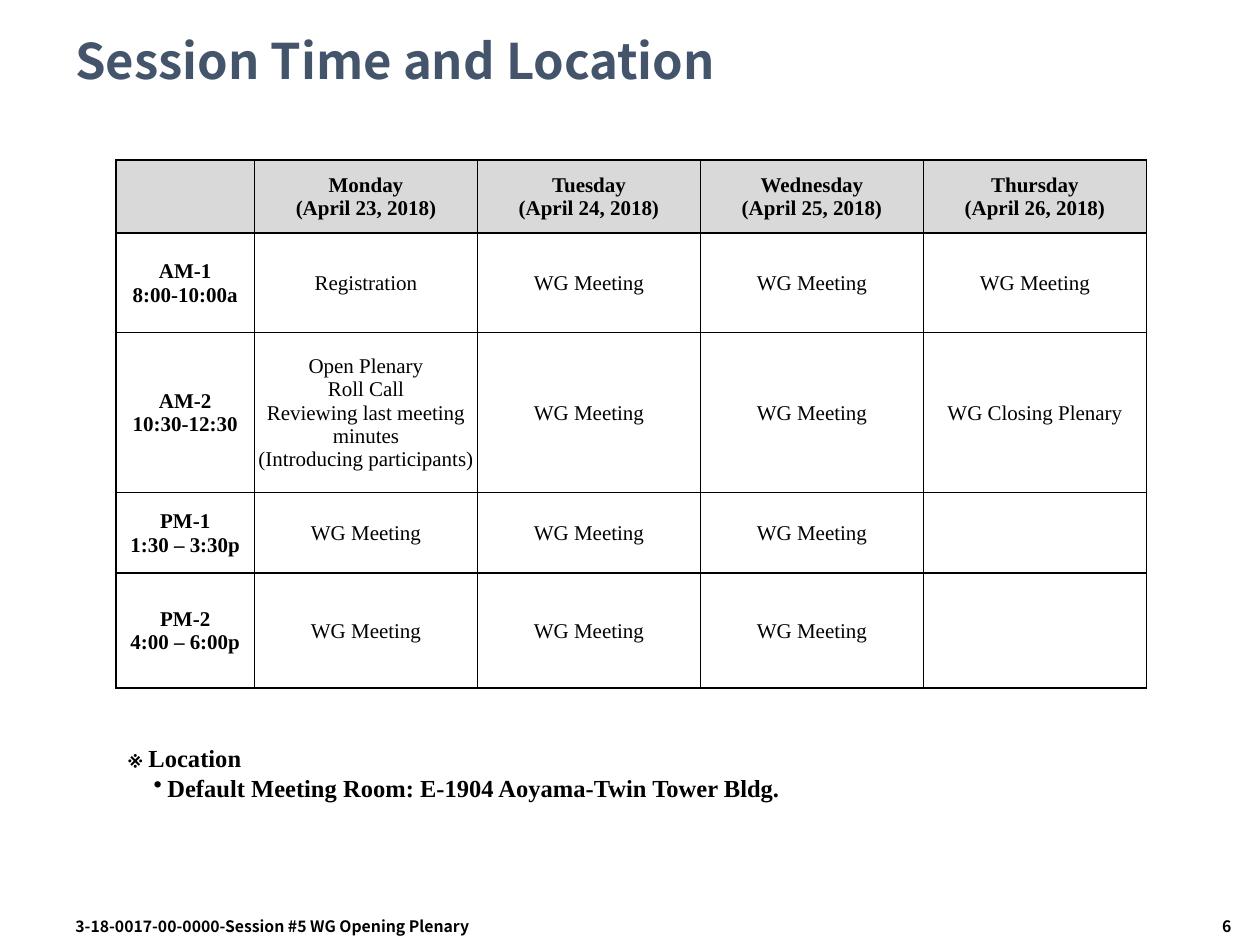
from lxml import etree
from pptx import Presentation
from pptx.dml.color import RGBColor
from pptx.enum.text import MSO_ANCHOR, PP_ALIGN
from pptx.oxml.ns import qn
from pptx.util import Pt

LEFT, CENTER, RIGHT = PP_ALIGN.LEFT, PP_ALIGN.CENTER, PP_ALIGN.RIGHT
TOP, MIDDLE = MSO_ANCHOR.TOP, MSO_ANCHOR.MIDDLE

EMU_PER_PX = 9144
SANS, SERIF = "Noto Sans CJK KR", "Times New Roman"
COLORS = {"title": "44546A", "ink": "000000", "header": "D9D9D9"}

DAYS = ["Monday", "Tuesday", "Wednesday", "Thursday"]
FIRST_DATE = 23
MEETING = "WG Meeting"
PLENARY = ("Open Plenary\nRoll Call\nReviewing last meeting minutes\n"
           "(Introducing participants)")
SCHEDULE = [
    [""] + [f"{day}\n(April {FIRST_DATE + i}, 2018)" for i, day in enumerate(DAYS)],
    ["AM-1\n8:00-10:00a", "Registration", MEETING, MEETING, MEETING],
    ["AM-2\n10:30-12:30", PLENARY, MEETING, MEETING, "WG Closing Plenary"],
    ["PM-1\n1:30 – 3:30p", MEETING, MEETING, MEETING, ""],
    ["PM-2\n4:00 – 6:00p", MEETING, MEETING, MEETING, ""],
]
COLUMN_WIDTHS = [110] + [177] * len(DAYS)
ROW_HEIGHTS = [58, 79, 127, 64, 91]


def px(length):
    return length * EMU_PER_PX


class SlideBuilder:
    def __init__(self, slide):
        self.slide = slide

    def fill_text(self, frame, text, size, face, color="ink", bold=True, align=LEFT):
        frame.text = text
        for paragraph in frame.paragraphs:
            paragraph.alignment = align
            font = paragraph.font
            font.size, font.name, font.bold = Pt(size), face, bold
            font.color.rgb = RGBColor.from_string(COLORS[color])

    def text(self, box, text, size, face, color="ink", align=LEFT, anchor=TOP):
        frame = self.slide.shapes.add_textbox(*map(px, box)).text_frame
        frame.word_wrap = True
        frame.vertical_anchor = anchor
        self.fill_text(frame, text, size, face, color, align=align)
        return frame.paragraphs

    def bullet(self, paragraph, indent, hang):
        props = paragraph._p.get_or_add_pPr()
        props.set("marL", str(px(indent)))
        props.set("indent", str(-px(hang)))
        mark = etree.Element(qn("a:buChar"), char="•")
        props.insert(0, mark)

    def borders(self, cell):
        props = cell._tc.get_or_add_tcPr()
        for side in ("lnL", "lnR", "lnT", "lnB"):
            line = etree.SubElement(props, qn(f"a:{side}"), w=str(Pt(1)))
            fill = etree.SubElement(line, qn("a:solidFill"))
            etree.SubElement(fill, qn("a:srgbClr"), val=COLORS["ink"])

    def table(self, left, top, widths, heights, rows):
        table = self.slide.shapes.add_table(
            len(rows), len(widths), px(left), px(top),
            px(sum(widths)), px(sum(heights))).table
        table.first_row = table.horz_banding = False
        for column, width in zip(table.columns, widths):
            column.width = px(width)
        for r, (height, texts) in enumerate(zip(heights, rows)):
            table.rows[r].height = px(height)
            for c, text in enumerate(texts):
                self.cell(table.cell(r, c), text, r == 0, c == 0)

    def cell(self, cell, text, is_header, is_label):
        self.borders(cell)
        if is_header:
            cell.fill.solid()
            cell.fill.fore_color.rgb = RGBColor.from_string(COLORS["header"])
        else:
            cell.fill.background()
        cell.margin_left = cell.margin_right = cell.margin_top = px(1)
        cell.margin_bottom = 0
        cell.vertical_anchor = MIDDLE
        self.fill_text(cell.text_frame, text, 12, SERIF,
                       bold=is_header or is_label, align=CENTER)


def main():
    deck = Presentation()
    deck.slide_width, deck.slide_height = px(1000), px(750)
    builder = SlideBuilder(deck.slides.add_slide(deck.slide_layouts[6]))

    title = builder.text((50, 17, 900, 67), "Session Time and Location",
                         28, SANS, "title", anchor=MIDDLE)
    title[0].line_spacing = 0.9

    builder.text((50, 723, 442, 27),
                 "3-18-0017-00-0000-Session #5 WG Opening Plenary", 9, SANS)
    builder.text((825, 723, 162, 27), "6", 9, SANS, align=RIGHT)

    location = builder.text(
        (92, 585, 858, 57),
        "※ Location\nDefault Meeting Room: E-1904 Aoyama-Twin Tower Bldg.",
        14, SERIF)
    builder.bullet(location[1], 31, 11)

    builder.table(92, 127, COLUMN_WIDTHS, ROW_HEIGHTS, SCHEDULE)
    deck.save("out.pptx")


if __name__ == "__main__":
    main()
